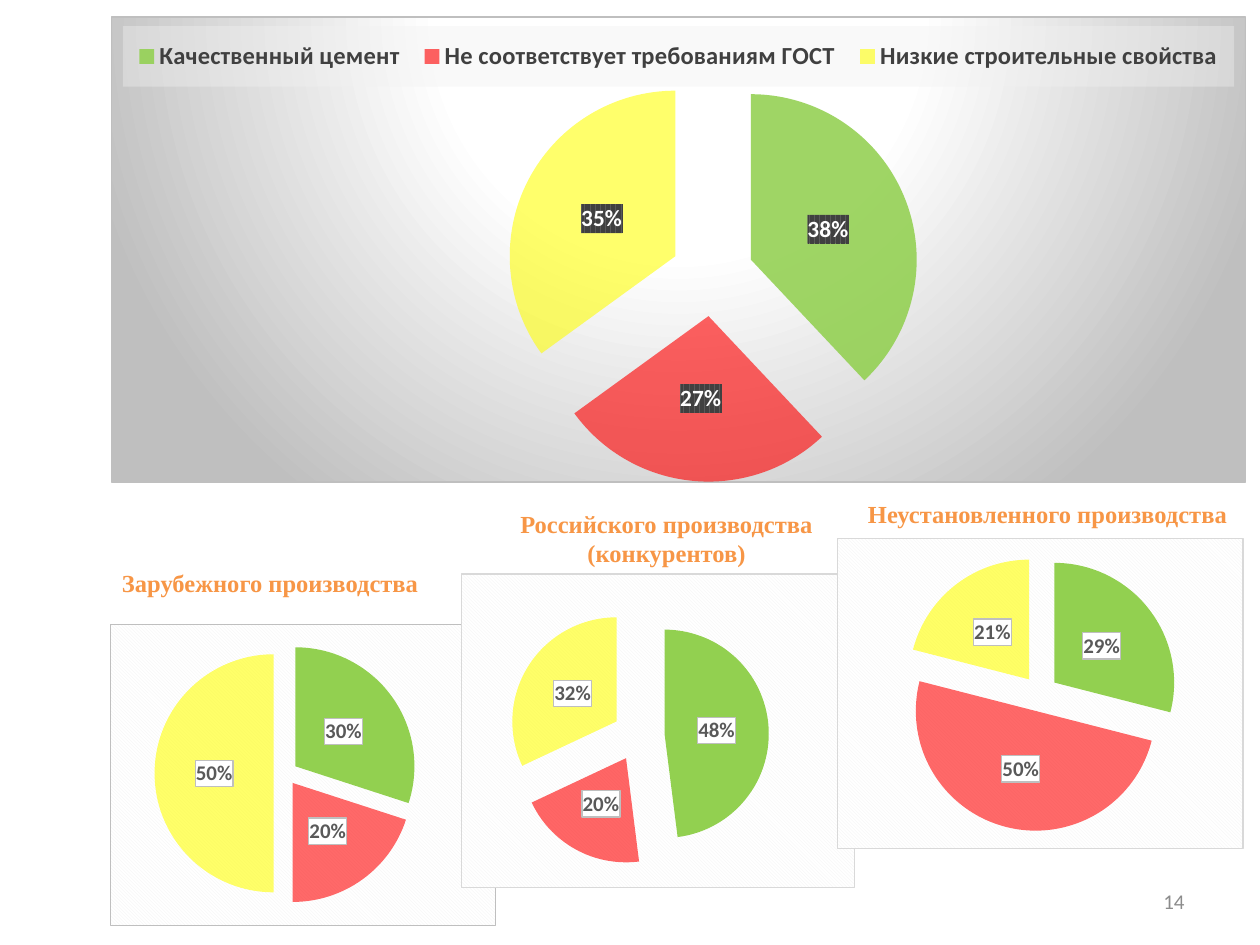
from pptx import Presentation
from pptx.chart import data as chart_data
from pptx.dml import color
from pptx.enum import chart as chart_enum, text
from pptx.oxml import ns, parse_xml
from pptx.util import Inches, Pt

COLORS = {
    "good": "92D050", "nonconforming": "FF0000", "weak": "FFFF00",
    "heading": "F79646", "number": "8C8C8C", "legend": "404040",
    "label": "595959", "white": "FFFFFF", "black": "000000",
    "pale": "F2F2F2", "silver": "BFBFBF", "light": "D9D9D9",
}


def xml(markup):
    return parse_xml(f"<root {ns.nsdecls('a', 'c')}>{markup}</root>")[0]


def style(font, size, shade, bold=False, name="Calibri"):
    font.size = Pt(size)
    font.bold = bold
    font.name = name
    font.color.rgb = color.RGBColor.from_string(COLORS[shade])


solid_fill = '<a:solidFill><a:srgbClr val="{}"><a:alpha val="{}"/></a:srgbClr></a:solidFill>'
thin_line = '<a:ln w="9525"><a:solidFill><a:srgbClr val="{}"/></a:solidFill></a:ln>'
pattern_fill = (
    '<a:pattFill prst="{}"><a:fgClr><a:srgbClr val="{}"/></a:fgClr>'
    '<a:bgClr><a:srgbClr val="{}"/></a:bgClr></a:pattFill>'
)
manual_layout = (
    '<c:layout><c:manualLayout>{}<c:xMode val="edge"/><c:yMode val="edge"/>'
    '<c:x val="{}"/><c:y val="{}"/><c:w val="{}"/><c:h val="{}"/>'
    '</c:manualLayout></c:layout>'
)
spotlight = (
    '<a:gradFill><a:gsLst>'
    + "".join(
        f'<a:gs pos="{position}"><a:srgbClr val="{COLORS[shade]}"/></a:gs>'
        for position, shade in [(0, "white"), (39000, "white"), (100000, "silver")]
    )
    + '</a:gsLst><a:path path="circle">'
    '<a:fillToRect l="50000" t="-80000" r="50000" b="180000"/></a:path></a:gradFill>'
)
hatching = pattern_fill.format("dkDnDiag", COLORS["pale"], COLORS["white"])
dark_label = pattern_fill.format("dkVert", COLORS["legend"], COLORS["label"])
white_label = solid_fill.format(COLORS["white"], 100000) + thin_line.format(COLORS["silver"])

prs = Presentation()
prs.slide_width, prs.slide_height = Inches(10), Inches(7.5)
slide = prs.slides.add_slide(prs.slide_layouts[6])

number_frame = slide.shapes.add_textbox(
    Inches(7.17), Inches(6.95), Inches(2.33), Inches(0.4)
).text_frame
number_frame.word_wrap = True
number_frame.vertical_anchor = text.MSO_ANCHOR.MIDDLE
page_number = number_frame.paragraphs[0]
page_number.text = "14"
page_number.alignment = text.PP_ALIGN.RIGHT
style(page_number.font, 12, "number")

quality = ["Качественный цемент", "Не соответствует требованиям ГОСТ", "Низкие строительные свойства"]
pies = [
    ((0.88, 0.13, 9.01, 3.7), quality, (38, 27, 35), (88, 61, 58), 25,
     (0.08, 0.11, 0.9, 0.89), "silver"),
    ((0.87, 4.95, 3.07, 2.4), "123", (30, 20, 50), (100, 59, 59), 10,
     (0, 0.06, 0.91, 0.87), "silver"),
    ((3.66, 4.55, 3.13, 2.5), "123", (48, 20, 32), (100, 60, 59), 25,
     (0.01, 0.1, 0.88, 0.83), "light"),
    ((6.64, 4.27, 3.23, 2.47), "123", (29, 50, 21), (100, 59, 60), 15, None, "light"),
]
for place, categories, shares, opacities, explosion, plot_area, border in pies:
    is_overall = categories is quality
    cement = chart_data.CategoryChartData()
    cement.categories = list(categories)
    cement.add_series("Series 1", shares)
    chart = slide.shapes.add_chart(
        chart_enum.XL_CHART_TYPE.PIE, *map(Inches, place), cement
    ).chart
    chart.has_title = False
    style(chart.font, 10, "black")
    chart.has_legend = is_overall

    backdrop = spotlight if is_overall else hatching
    space = chart.element
    space.find(ns.qn("c:chart")).addnext(
        xml(f"<c:spPr>{backdrop}{thin_line.format(COLORS[border])}</c:spPr>")
    )
    if plot_area:
        plot_element = space.find(".//" + ns.qn("c:plotArea"))
        for layout in plot_element.findall(ns.qn("c:layout")):
            plot_element.remove(layout)
        inner = '<c:layoutTarget val="inner"/>'
        plot_element.insert(0, xml(manual_layout.format(inner, *plot_area)))

    chart.plots[0].vary_by_categories = True
    series = chart.plots[0].series[0]
    series_element = space.find(".//" + ns.qn("c:ser"))
    series_element.find(ns.qn("c:tx")).addnext(xml(f'<c:explosion val="{explosion}"/>'))
    for index, (shade, opacity) in enumerate(zip(("good", "nonconforming", "weak"), opacities)):
        wedge = series.points[index].format
        wedge.fill.solid()
        wedge.fill.fore_color.rgb = color.RGBColor.from_string(COLORS[shade])
        wedge.line.fill.background()
        tint = series_element.findall(".//" + ns.qn("a:srgbClr"))[-1]
        tint.append(xml(f'<a:alpha val="{opacity * 1000}"/>'))

    labels = series.data_labels
    labels.show_percentage = True
    labels.show_value = False
    labels.number_format = "0%"
    labels.number_format_is_linked = False
    labels.position = chart_enum.XL_LABEL_POSITION.CENTER
    style(labels.font, 13.3 if is_overall else 12, "white" if is_overall else "label", True)
    label_box = dark_label if is_overall else white_label
    series_element.find(".//" + ns.qn("c:numFmt")).addnext(xml(f"<c:spPr>{label_box}</c:spPr>"))

    if is_overall:
        legend = chart.legend
        legend.position = chart_enum.XL_LEGEND_POSITION.TOP
        legend.include_in_layout = False
        style(legend.font, 14, "legend", True)
        legend_element = space.find(".//" + ns.qn("c:legend"))
        for layout in legend_element.findall(ns.qn("c:layout")):
            legend_element.remove(layout)
        overlay = legend_element.find(ns.qn("c:overlay"))
        overlay.addprevious(xml(manual_layout.format("", 0.01, 0.02, 0.98, 0.13)))
        overlay.addnext(xml(f"<c:spPr>{solid_fill.format(COLORS['pale'], 39000)}</c:spPr>"))

headings = [
    ("Зарубежного производства", (0.87, 4.46, 2.57, 0.34), False, text.PP_ALIGN.LEFT),
    ("Российского производства (конкурентов)", (3.45, 3.99, 3.68, 0.57), True, text.PP_ALIGN.CENTER),
    ("Неустановленного производства", (6.79, 3.91, 3.08, 0.34), False, text.PP_ALIGN.LEFT),
]
for wording, place, wraps, alignment in headings:
    heading_frame = slide.shapes.add_textbox(*map(Inches, place)).text_frame
    heading_frame.word_wrap = wraps
    heading_frame.auto_size = text.MSO_AUTO_SIZE.SHAPE_TO_FIT_TEXT
    heading = heading_frame.paragraphs[0]
    heading.text = wording
    heading.alignment = alignment
    style(heading.font, 14, "heading", True, "Times New Roman")

prs.save("out.pptx")
